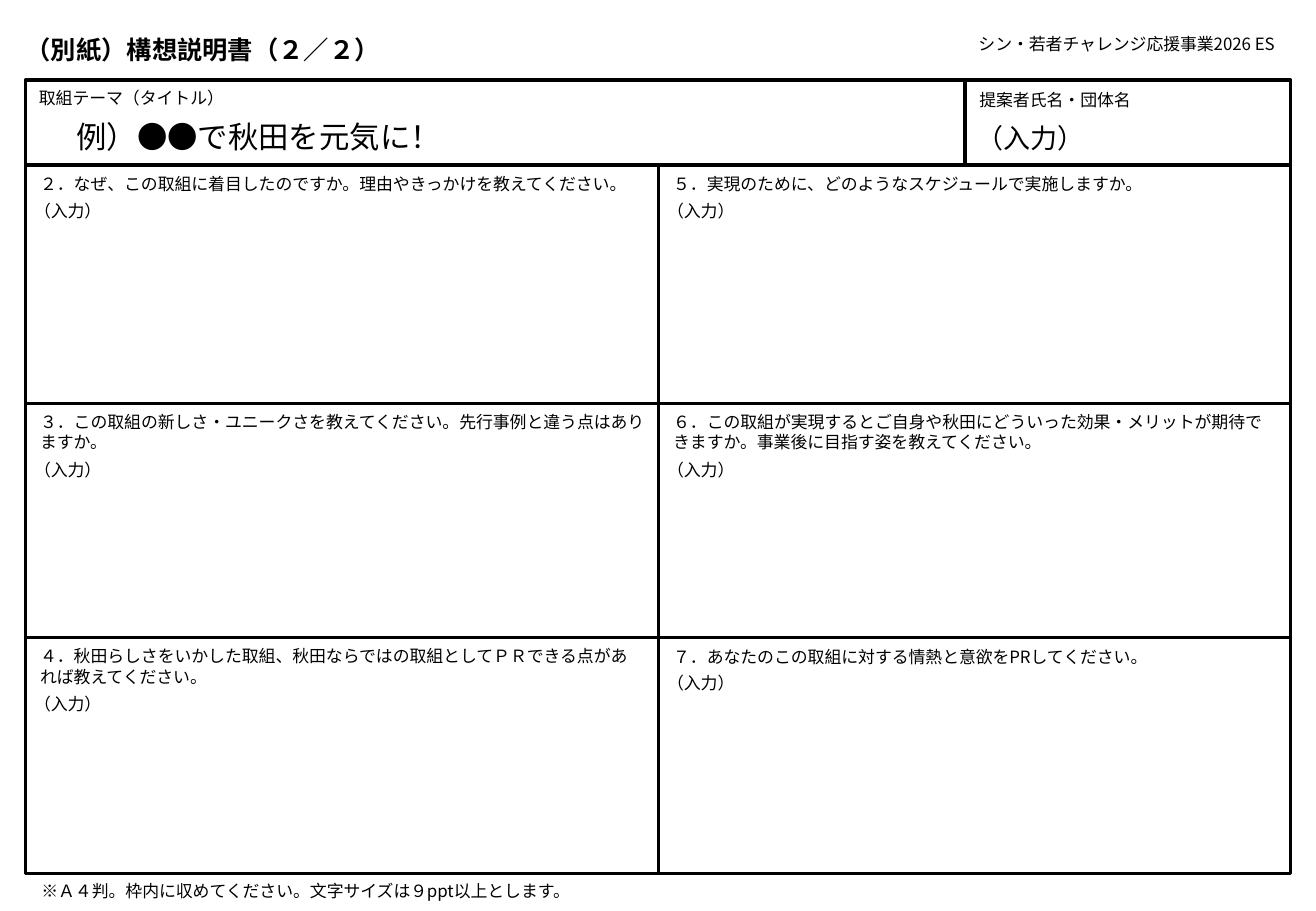
from lxml.etree import SubElement
from pptx import Presentation
from pptx.dml.color import RGBColor
from pptx.enum.shapes import MSO_SHAPE
from pptx.enum.text import MSO_ANCHOR, MSO_AUTO_SIZE, PP_ALIGN
from pptx.oxml.ns import qn
from pptx.util import Pt

# Content
TITLE = "（別紙）構想説明書（２／２）"
PROGRAM = "シン・若者チャレンジ応援事業2026 ES"
THEME_LABEL = "取組テーマ（タイトル）"
THEME = "例）●●で秋田を元気に！"
PROPOSER_LABEL = "提案者氏名・団体名"
ANSWER = "（入力）"
FOOTNOTE = "※Ａ４判。枠内に収めてください。文字サイズは９ppt以上とします。"
# One list per column: question, box width, box height
QUESTIONS = [
    [
        ("２．なぜ、この取組に着目したのですか。理由やきっかけを教えてください。", 517, 29),
        ("３．この取組の新しさ・ユニークさを教えてください。先行事例と違う点はありますか。", 525, 46),
        ("４．秋田らしさをいかした取組、秋田ならではの取組としてＰＲできる点があれば教えてください。", 517, 46),
    ],
    [
        ("５．実現のために、どのようなスケジュールで実施しますか。", 517, 29),
        ("６．この取組が実現するとご自身や秋田にどういった効果・メリットが期待できますか。事業後に目指す姿を教えてください。", 520, 46),
        ("７．あなたのこの取組に対する情熱と意欲をPRしてください。", 517, 29),
    ],
]

# Layout in px, 100 px to the inch
EMU_PER_PX = 9144
SLIDE_WIDTH, SLIDE_HEIGHT = 1083, 750
LEFT, MIDDLE, RIGHT = 21, 542, 1062
HEADER_TOP, HEADER_SPLIT = 66, 794
ROWS = [136, 332, 525, 719]
JAPANESE, LATIN = "Noto Sans CJK JP", "Arial"
BLACK = "000000"
LABEL_INSETS, ANSWER_INSETS, ENTRY_INSETS = (12, 6), (4, 4), (10, 5)


def px(length):
    return length * EMU_PER_PX


def color(hex_string):
    return RGBColor.from_string(hex_string)


def add_frame(slide, left, top, right, bottom):
    shape = slide.shapes.add_shape(
        MSO_SHAPE.RECTANGLE, px(left), px(top), px(right - left), px(bottom - top))
    shape.shadow.inherit = False
    shape.fill.background()
    shape.line.color.rgb = color(BLACK)
    shape.line.width = Pt(2)


def add_text(slide, text, left, top, width, height, size=10, insets=LABEL_INSETS,
             font=JAPANESE, bold=False, align=PP_ALIGN.LEFT,
             anchor=MSO_ANCHOR.TOP, auto_size=MSO_AUTO_SIZE.SHAPE_TO_FIT_TEXT):
    box = slide.shapes.add_textbox(px(left), px(top), px(width), px(height))
    frame = box.text_frame
    frame.word_wrap = True
    frame.auto_size = auto_size
    frame.vertical_anchor = anchor
    frame.margin_left = frame.margin_right = px(insets[0])
    frame.margin_top = frame.margin_bottom = px(insets[1])
    paragraph = frame.paragraphs[0]
    paragraph.text = text
    paragraph.alignment = align
    paragraph.font.size = Pt(size)
    paragraph.font.bold = bold
    paragraph.font.color.rgb = color(BLACK)
    paragraph.font.name = font
    # East Asian typeface
    properties = paragraph._p.pPr.find(qn("a:defRPr"))
    SubElement(properties, qn("a:ea")).set("typeface", JAPANESE)


def main():
    presentation = Presentation()
    presentation.slide_width = px(SLIDE_WIDTH)
    presentation.slide_height = px(SLIDE_HEIGHT)
    slide = presentation.slides.add_slide(presentation.slide_layouts[6])

    # Frames: header cells, whole form, left column, middle row
    add_frame(slide, LEFT, HEADER_TOP, HEADER_SPLIT, ROWS[0])
    add_frame(slide, HEADER_SPLIT, HEADER_TOP, RIGHT, ROWS[0])
    add_frame(slide, LEFT, ROWS[0], RIGHT, ROWS[3])
    add_frame(slide, LEFT, ROWS[0], MIDDLE, ROWS[3])
    add_frame(slide, LEFT, ROWS[1], MIDDLE, ROWS[2])
    add_frame(slide, MIDDLE, ROWS[1], RIGHT, ROWS[2])

    # Title line
    add_text(slide, TITLE, LEFT, 22, 522, 37, size=15, insets=(0, 0), bold=True,
             anchor=MSO_ANCHOR.MIDDLE, auto_size=MSO_AUTO_SIZE.NONE)
    add_text(slide, PROGRAM, 691, 22, 370, 29, align=PP_ALIGN.RIGHT)

    # Header entries
    add_text(slide, THEME_LABEL, 20, HEADER_TOP, 202, 29)
    add_text(slide, THEME, 53, 92, 433, 40, size=18, insets=ENTRY_INSETS)
    add_text(slide, PROPOSER_LABEL, HEADER_SPLIT, 68, 153, 29)
    add_text(slide, ANSWER, HEADER_SPLIT, 95, 267, 37, size=16, insets=ENTRY_INSETS)

    # Questions, each with its answer just below
    for column_left, questions in zip((LEFT, MIDDLE), QUESTIONS):
        for row_top, (question, width, height) in zip(ROWS, questions):
            top = row_top + 1
            add_text(slide, question, column_left, top, width, height)
            add_text(slide, ANSWER, column_left + 3, top + height - 5, 516, 25,
                     insets=ANSWER_INSETS, font=LATIN)

    # Footnote
    add_text(slide, FOOTNOTE, 22, ROWS[3], 615, 29)

    presentation.save("out.pptx")


if __name__ == "__main__":
    main()
